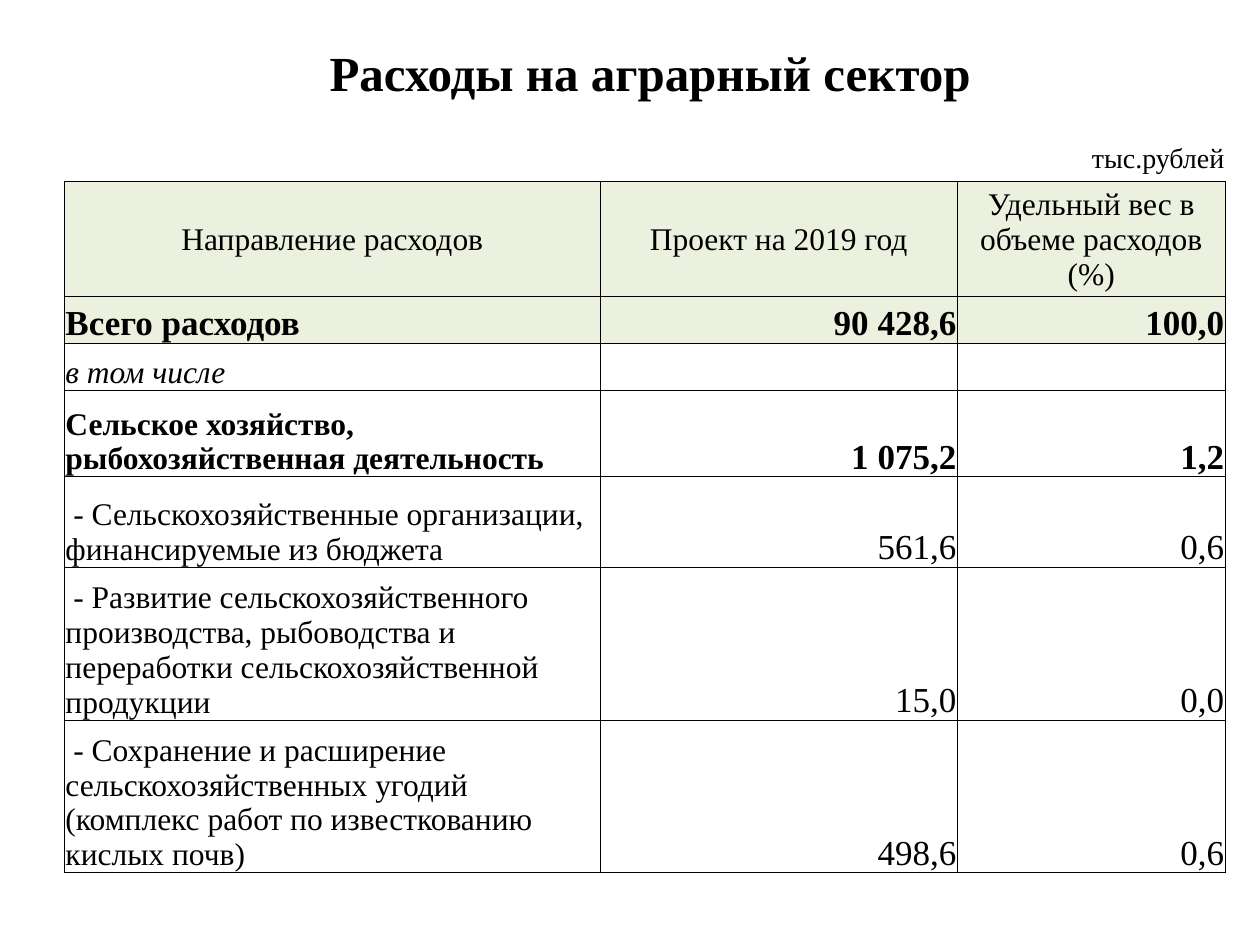
"""Build a slide with a table of spending on the agrarian sector."""
from dataclasses import dataclass

from lxml.etree import SubElement
from pptx import Presentation
from pptx.dml.color import RGBColor
from pptx.enum.text import MSO_ANCHOR as Anchor, PP_ALIGN as Align
from pptx.oxml.ns import qn
from pptx.util import Cm, Pt


@dataclass(frozen=True)
class Theme:
    font: str = "Times New Roman"
    ink: str = "000000"
    band: str = "EBF1DE"
    title: int = 28
    total: int = 20
    label: int = 18
    unit: int = 16
    border: float = 0.5


theme = Theme()


def write(frame, text, *, size=theme.label, bold=False, italic=False, align=Align.LEFT):
    frame.text = text
    for para in frame.paragraphs:
        para.alignment = align
        for span in para.runs:
            span.font.name = theme.font
            span.font.size = Pt(size)
            span.font.bold = bold
            span.font.italic = italic
            span.font.color.rgb = RGBColor.from_string(theme.ink)


def draw_borders(cell, visible):
    props = cell._tc.get_or_add_tcPr()
    for side in ("lnL", "lnR", "lnT", "lnB"):
        line = SubElement(props, qn(f"a:{side}"), w=str(Pt(theme.border)))
        if side in visible:
            fill = SubElement(line, qn("a:solidFill"))
            SubElement(fill, qn("a:srgbClr"), val=theme.ink)
        else:
            SubElement(line, qn("a:noFill"))


deck = Presentation()
deck.slide_width, deck.slide_height = Cm(25.4), Cm(19.05)
page = deck.slides.add_slide(deck.slide_layouts[5])

title = page.shapes.title
title.left, title.top, title.width, title.height = Cm(2.31), Cm(0.72), Cm(21.59), Cm(1.45)
write(title.text_frame, "Расходы на аграрный сектор", size=theme.title, bold=True, align=Align.CENTER)

rows = [
    ("", "", "тыс.рублей"),
    ("Направление расходов", "Проект на 2019 год", "Удельный вес в объеме расходов\n(%)"),
    ("Всего расходов", "90 428,6", "100,0"),
    ("в том числе", "", ""),
    ("Сельское хозяйство, рыбохозяйственная деятельность", "1 075,2", "1,2"),
    (" - Сельскохозяйственные организации, финансируемые из бюджета", "561,6", "0,6"),
    (" - Развитие сельскохозяйственного производства, рыбоводства и переработки "
     "сельскохозяйственной продукции", "15,0", "0,0"),
    (" - Сохранение и расширение сельскохозяйственных угодий\v"
     "(комплекс работ по известкованию кислых почв)", "498,6", "0,6"),
]
widths = [10.8, 7.2, 5.4]
heights = [0.94, 2.32, 0.94, 0.94, 1.75, 1.83, 3.08, 3.07]
UNIT, HEADER, TOTAL, INCLUDING, SECTOR = range(5)

table = page.shapes.add_table(
    len(rows), len(widths), Cm(1.3), Cm(2.72), Cm(sum(widths)), Cm(sum(heights))
).table
table.first_row = table.horz_banding = False
for column, width in zip(table.columns, widths):
    column.width = Cm(width)
for row, height in zip(table.rows, heights):
    row.height = Cm(height)

for r, texts in enumerate(rows):
    for c, text in enumerate(texts):
        cell = table.cell(r, c)
        cell.margin_left = cell.margin_right = cell.margin_top = Cm(0.02)
        cell.margin_bottom = 0
        cell.vertical_anchor = Anchor.MIDDLE if r <= HEADER else Anchor.BOTTOM
        draw_borders(cell, ("lnB",) if r == UNIT else ("lnL", "lnR", "lnT", "lnB"))
        if r in (HEADER, TOTAL):
            cell.fill.solid()
            cell.fill.fore_color.rgb = RGBColor.from_string(theme.band)
        else:
            cell.fill.background()

        if r == UNIT:
            size = theme.unit
        elif r == TOTAL or (r > TOTAL and c > 0):
            size = theme.total
        else:
            size = theme.label
        if r == HEADER:
            align = Align.CENTER
        else:
            align = Align.RIGHT if c else Align.LEFT
        if text:
            write(cell.text_frame, text, size=size, bold=r in (TOTAL, SECTOR),
                  italic=r == INCLUDING, align=align)

deck.save("out.pptx")
